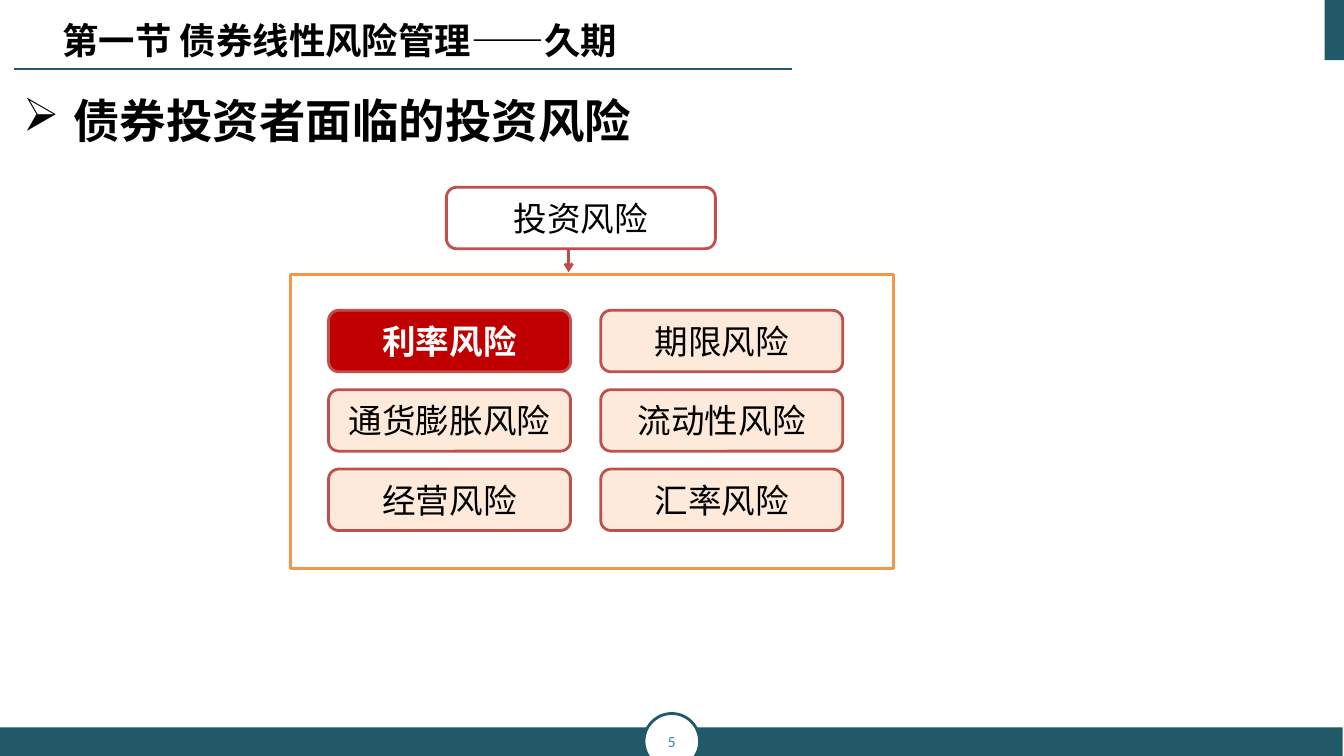
from dataclasses import dataclass
from typing import Optional

from pptx import Presentation
from pptx import util as u
from pptx.dml.color import RGBColor
from pptx.enum import shapes as sh
from pptx.enum import text as tx
from pptx.oxml import ns
from pptx.oxml import xmlchemy as xml

TEAL = RGBColor(0x21, 0x59, 0x68)
PAGE_BLUE = RGBColor(0x31, 0x85, 0x9C)
RED = RGBColor(0xC0, 0x50, 0x4D)
ARROW_RED = RGBColor(0xBF, 0x4C, 0x48)
DEEP_RED = RGBColor(0xC0, 0x00, 0x00)
PEACH = RGBColor(0xFD, 0xEA, 0xDA)
ORANGE = RGBColor(0xF7, 0x96, 0x46)
WHITE = RGBColor(0xFF, 0xFF, 0xFF)
BLACK = RGBColor(0x00, 0x00, 0x00)
CJK = "Noto Sans CJK SC"


@dataclass(frozen=True)
class Style:
    size: float
    font: str
    color: RGBColor = BLACK
    bold: bool = False


@dataclass(frozen=True)
class Box:
    left: float
    top: float
    width: float
    height: float
    kind: sh.MSO_SHAPE = sh.MSO_SHAPE.RECTANGLE
    fill: Optional[RGBColor] = None
    line: Optional[RGBColor] = None
    label: str = ""
    style: Optional[Style] = None


def write(frame, content: str, style: Style, align=tx.PP_ALIGN.CENTER) -> None:
    frame.text = content
    frame.word_wrap = True
    paragraph = frame.paragraphs[0]
    paragraph.alignment = align
    run = paragraph.runs[0]
    run.font.size = u.Pt(style.size)
    run.font.bold = style.bold
    run.font.color.rgb = style.color
    run.font.name = style.font
    east_asian = xml.OxmlElement("a:ea")
    east_asian.set("typeface", CJK)
    run.font._element.find(ns.qn("a:latin")).addnext(east_asian)


def draw_box(slide, box: Box) -> None:
    shape = slide.shapes.add_shape(
        box.kind, u.Cm(box.left), u.Cm(box.top), u.Cm(box.width), u.Cm(box.height))
    shape.shadow.inherit = False
    if box.fill is None:
        shape.fill.background()
    else:
        shape.fill.solid()
        shape.fill.fore_color.rgb = box.fill
    if box.line is None:
        shape.line.fill.background()
    else:
        shape.line.color.rgb = box.line
        shape.line.width = u.Pt(2)
    if box.style:
        write(shape.text_frame, box.label, box.style)
        shape.text_frame.vertical_anchor = tx.MSO_ANCHOR.MIDDLE


def draw_line(slide, x1: float, y1: float, x2: float, y2: float,
              color: RGBColor, width: float, arrow: bool = False) -> None:
    line = slide.shapes.add_connector(
        sh.MSO_CONNECTOR.STRAIGHT, u.Cm(x1), u.Cm(y1), u.Cm(x2), u.Cm(y2))
    line.line.color.rgb = color
    line.line.width = u.Pt(width)
    properties = line._element.spPr
    if arrow:
        head = xml.OxmlElement("a:tailEnd")
        head.set("type", "arrow")
        properties.find(ns.qn("a:ln")).append(head)
    properties.append(xml.OxmlElement("a:effectLst"))


def draw_title(slide) -> None:
    title = slide.shapes.title
    title.left, title.top = u.Cm(1.32), u.Cm(0.33)
    title.width, title.height = u.Cm(18.24), u.Cm(1.37)
    write(title.text_frame, "第一节 债券线性风险管理——久期", Style(26, CJK, bold=True),
          tx.PP_ALIGN.LEFT)
    title.text_frame.vertical_anchor = tx.MSO_ANCHOR.MIDDLE


def draw_heading(slide) -> None:
    heading = slide.shapes.add_textbox(u.Cm(0.33), u.Cm(2.2), u.Cm(31.8), u.Cm(16.8))
    write(heading.text_frame, "债券投资者面临的投资风险", Style(33.2, "Calibri", bold=True),
          tx.PP_ALIGN.LEFT)
    properties = heading.text_frame.paragraphs[0]._p.get_or_add_pPr()
    properties.set("marL", str(u.Cm(1.27)))
    properties.set("indent", str(-u.Cm(1.27)))
    bullet = xml.OxmlElement("a:buChar")
    bullet.set("char", "➢")
    properties.append(bullet)


def risk_boxes() -> list[Box]:
    plain = Style(24, "Times New Roman")
    highlighted = Style(24, "Calibri", WHITE, True)
    columns = [["利率风险", "通货膨胀风险", "经营风险"],
               ["期限风险", "流动性风险", "汇率风险"]]
    return [
        Box(8.28 + 6.86 * column, 7.82 + 2 * row, 6.1, 1.55,
            sh.MSO_SHAPE.ROUNDED_RECTANGLE,
            DEEP_RED if risk == "利率风险" else PEACH, RED, risk,
            highlighted if risk == "利率风险" else plain)
        for column, risks in enumerate(columns)
        for row, risk in enumerate(risks)
    ]


def main() -> None:
    deck = Presentation()
    deck.slide_width, deck.slide_height = u.Cm(33.87), u.Cm(19.05)
    slide = deck.slides.add_slide(deck.slide_layouts[5])

    page_frame = [
        Box(33.38, 0, 0.49, 1.52, fill=TEAL),
        Box(0, 18.33, 33.84, 0.72, fill=TEAL),
        Box(16.23, 17.98, 1.4, 1.4, sh.MSO_SHAPE.OVAL, WHITE, TEAL, "5",
            Style(11, "Calibri", PAGE_BLUE)),
    ]
    root_risk = Box(11.25, 4.72, 6.78, 1.55, sh.MSO_SHAPE.ROUNDED_RECTANGLE,
                    WHITE, RED, "投资风险", Style(24, CJK))
    risk_group = Box(7.32, 6.91, 15.19, 7.42, line=ORANGE)

    for part in page_frame:
        draw_box(slide, part)
    draw_line(slide, 19.96, 1.73, 0.36, 1.73, TEAL, 1.5)
    draw_title(slide)
    draw_heading(slide)
    for part in [root_risk, *risk_boxes()]:
        draw_box(slide, part)
    draw_line(slide, 14.33, 6.27, 14.33, 6.86, ARROW_RED, 2, arrow=True)
    draw_box(slide, risk_group)

    deck.save("out.pptx")


if __name__ == "__main__":
    main()
